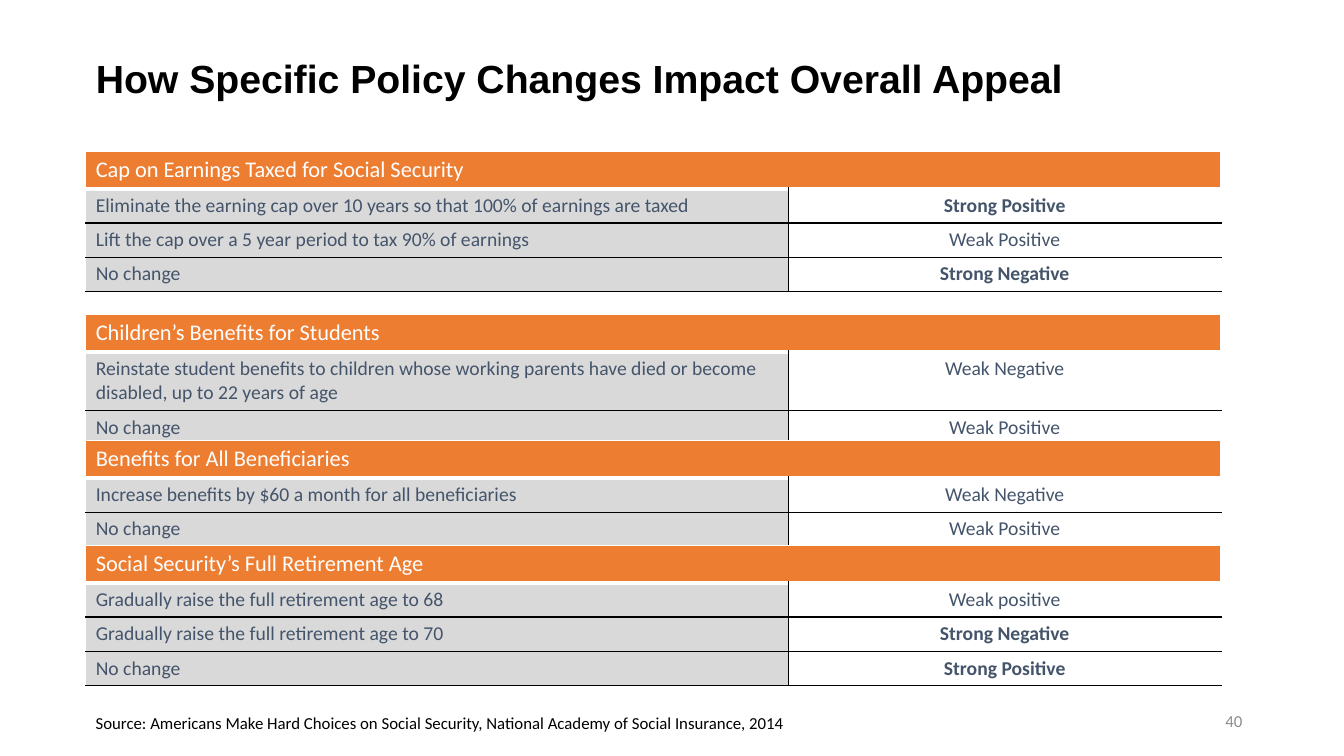
from lxml.etree import SubElement
from pptx import Presentation
from pptx.dml.color import RGBColor
from pptx.enum.text import MSO_ANCHOR, MSO_AUTO_SIZE, PP_ALIGN
from pptx.oxml.ns import qn
from pptx.util import Inches, Pt

COLORS = {"black": "000000", "white": "FFFFFF", "orange": "ED7D31",
          "gray": "D9D9D9", "slate": "44546A", "number": "8C8C8C"}
LEFT = 0.85
COLUMN_WIDTHS = (6.97, 4.29)
HEADER_HEIGHT, LINE_HEIGHT, TALL_HEIGHT = 0.37, 0.34, 0.58


def write(text_frame, text, size, color, bold=False, align=PP_ALIGN.LEFT, font="Calibri"):
    text_frame.text = text
    text_frame.word_wrap = True
    paragraph = text_frame.paragraphs[0]
    paragraph.alignment = align
    run_font = paragraph.runs[0].font
    run_font.name, run_font.size, run_font.bold = font, Pt(size), bold
    run_font.color.rgb = RGBColor.from_string(COLORS[color])


def style_cell(cell, fill, borders):
    """Borders are (color, points) pairs for left, right, top and bottom."""
    properties = cell._tc.get_or_add_tcPr()
    for side, (color, points) in zip("LRTB", borders):
        line = SubElement(properties, qn(f"a:ln{side}"), w=str(Pt(points)))
        solid = SubElement(line, qn("a:solidFill"))
        SubElement(solid, qn("a:srgbClr"), val=COLORS[color])
    if fill:
        cell.fill.solid()
        cell.fill.fore_color.rgb = RGBColor.from_string(COLORS[fill])
    else:
        cell.fill.background()


presentation = Presentation()
presentation.slide_width, presentation.slide_height = Inches(13.33), Inches(7.5)
slide = presentation.slides.add_slide(presentation.slide_layouts[5])

# Title
title = slide.shapes.title
title.left, title.top = Inches(LEFT), Inches(0.48)
title.width, title.height = Inches(11.35), Inches(0.65)
write(title.text_frame, "How Specific Policy Changes Impact Overall Appeal",
      28, "black", bold=True, font="Arial")
title.text_frame.auto_size = MSO_AUTO_SIZE.NONE
title.text_frame.vertical_anchor = MSO_ANCHOR.MIDDLE
title.text_frame.paragraphs[0].line_spacing = 0.9

# Policy tables: top, heading, (option, impact, row height)
policies = [
    (1.5, "Cap on Earnings Taxed for Social Security", [
        ("Eliminate the earning cap over 10 years so that 100% of earnings are taxed",
         "Strong Positive", LINE_HEIGHT),
        ("Lift the cap over a 5 year period to tax 90% of earnings",
         "Weak Positive", LINE_HEIGHT),
        ("No change", "Strong Negative", LINE_HEIGHT)]),
    (3.12, "Children’s Benefits for Students", [
        ("Reinstate student benefits to children whose working parents have died "
         "or become disabled, up to 22 years of age", "Weak Negative", TALL_HEIGHT),
        ("No change", "Weak Positive", LINE_HEIGHT)]),
    (4.37, "Benefits for All Beneficiaries", [
        ("Increase benefits by $60 a month for all beneficiaries",
         "Weak Negative", LINE_HEIGHT),
        ("No change", "Weak Positive", LINE_HEIGHT)]),
    (5.41, "Social Security’s Full Retirement Age", [
        ("Gradually raise the full retirement age to 68", "Weak positive", LINE_HEIGHT),
        ("Gradually raise the full retirement age to 70", "Strong Negative", LINE_HEIGHT),
        ("No change", "Strong Positive", LINE_HEIGHT)]),
]
white, black, thick_white = ("white", 1), ("black", 1), ("white", 3)

for top, heading, options in policies:
    heights = [HEADER_HEIGHT] + [height for _, _, height in options]
    table = slide.shapes.add_table(
        len(heights), 2, Inches(LEFT), Inches(top),
        Inches(sum(COLUMN_WIDTHS)), Inches(sum(heights))).table
    table.horz_banding = False
    for column, width in zip(table.columns, COLUMN_WIDTHS):
        column.width = Inches(width)
    for row, height in zip(table.rows, heights):
        row.height = Inches(height)

    # Heading across both columns
    for cell in table.rows[0].cells:
        style_cell(cell, "orange", (white, white, white, thick_white))
    table.cell(0, 0).merge(table.cell(0, 1))
    write(table.cell(0, 0).text_frame, heading, 16, "white")

    # Options and their impact
    for index, (option, impact, _) in enumerate(options, start=1):
        upper = thick_white if index == 1 else black
        option_cell, impact_cell = table.cell(index, 0), table.cell(index, 1)
        style_cell(option_cell, "gray", (white, black, upper, black))
        style_cell(impact_cell, None, (black, white, upper, black))
        write(option_cell.text_frame, option, 14, "slate")
        write(impact_cell.text_frame, impact, 14, "slate",
              bold=impact.startswith("Strong"), align=PP_ALIGN.CENTER)

# Source line
source = slide.shapes.add_textbox(Inches(LEFT), Inches(7.02), Inches(9.87), Inches(0.3))
write(source.text_frame, "Source: Americans Make Hard Choices on Social Security, "
      "National Academy of Social Insurance, 2014", 12, "black")

# Slide number
number = slide.shapes.add_textbox(Inches(9.42), Inches(6.95), Inches(3), Inches(0.4))
write(number.text_frame, "40", 12, "number", align=PP_ALIGN.RIGHT)
number.text_frame.vertical_anchor = MSO_ANCHOR.MIDDLE

presentation.save("out.pptx")
